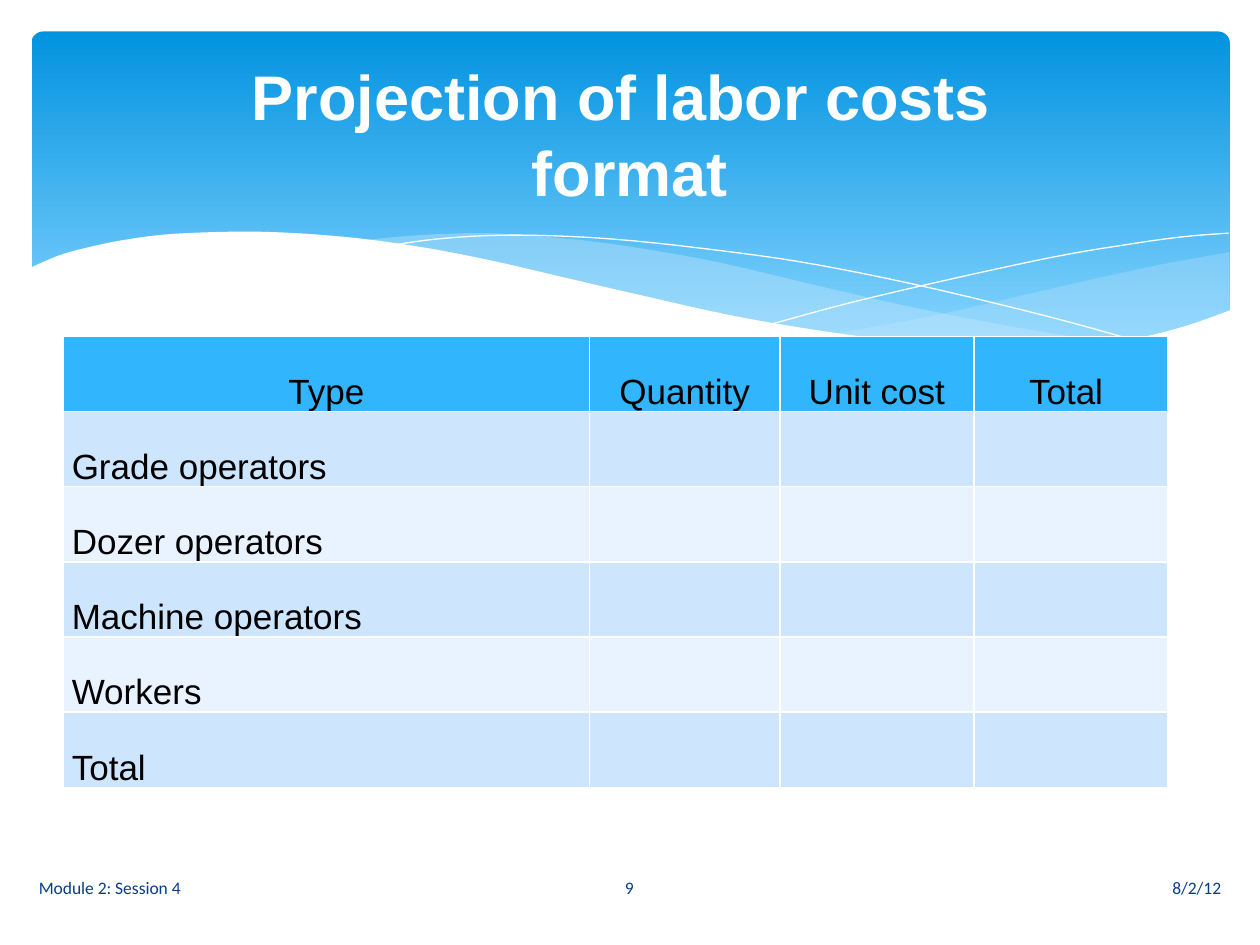
import pptx
import pptx.dml.color
import pptx.enum.shapes
import pptx.enum.text
import pptx.oxml
import pptx.oxml.ns
import pptx.util
from lxml import etree

Inches = pptx.util.Inches
Pt = pptx.util.Pt
RGBColor = pptx.dml.color.RGBColor
ALIGN = pptx.enum.text.PP_ALIGN
ANCHOR = pptx.enum.text.MSO_ANCHOR
qn = pptx.oxml.ns.qn

WHITE = RGBColor(0xFF, 0xFF, 0xFF)
BLACK = RGBColor(0x00, 0x00, 0x00)
NAVY = RGBColor(0x07, 0x3E, 0x87)
BANNER_TOP = RGBColor(0x02, 0x93, 0xE0)
BANNER_BOTTOM = RGBColor(0x83, 0xD3, 0xFE)
RIBBON = RGBColor(0xC6, 0xE7, 0xFC)
HEADER_FILL = RGBColor(0x31, 0xB6, 0xFD)
BANDS = (RGBColor(0xCE, 0xE5, 0xFE), RGBColor(0xE8, 0xF3, 0xFF))

TITLE = "Projection of labor costs \vformat"
HEADERS = ["Type", "Quantity", "Unit cost", "Total "]
LABOR_TYPES = ["Grade operators", "Dozer operators", "Machine operators", "Workers", "Total"]
COLUMN_WIDTHS = [4.18, 1.51, 1.54, 1.54]
TABLE_LEFT, TABLE_TOP, TABLE_HEIGHT = 0.5, 2.67, 3.58

# text, left, width, alignment
FOOTERS = [
    ("8/2/12", 5.65, 4.14, ALIGN.RIGHT),
    ("Module 2: Session 4", 0.21, 4.14, ALIGN.LEFT),
    ("9", 4.36, 1.27, ALIGN.CENTER),
]

# Each outline is a list of sides; a side is a smooth curve through its points.
RIGHT_RIBBON = [
    [(9.76, 2), (9.21, 2.1), (8.61, 2.23), (7.79, 2.42), (7.29, 2.53), (6.61, 2.65)],
    [(6.61, 2.65), (7.05, 2.71), (7.57, 2.76), (8.14, 2.78), (8.63, 2.75),
     (9.05, 2.69), (9.42, 2.59), (9.76, 2.47)],
]
LEFT_RIBBON = [
    [(8.93, 2.73), (8.37, 2.65), (7.75, 2.54), (7.06, 2.4), (6.29, 2.22), (5.69, 2.08),
     (5.14, 1.98), (4.65, 1.91), (4.2, 1.87), (3.8, 1.85), (3.28, 1.87), (2.86, 1.91)],
    [(2.86, 1.91), (3.42, 1.99), (4.04, 2.11), (4.49, 2.22), (5.3, 2.4), (6.01, 2.55),
     (6.65, 2.66), (7.22, 2.74), (7.73, 2.77), (8.18, 2.78), (8.57, 2.77), (8.93, 2.73)],
]
FALLING_LINE = [
    [(3.09, 1.95), (3.44, 1.9), (3.87, 1.87), (4.33, 1.87), (4.89, 1.9), (5.56, 1.97),
     (6.36, 2.08), (7.27, 2.26), (8.31, 2.51), (9.07, 2.72)],
]
RISING_LINE = [
    [(6.13, 2.57), (6.72, 2.41), (7.48, 2.23), (8.36, 2.04), (8.95, 1.94),
     (9.38, 1.88), (9.75, 1.85)],
]
FRONT_WAVE = [
    [(9.77, 2.46), (9.4, 2.59), (8.99, 2.69), (8.5, 2.75), (8.09, 2.77), (7.61, 2.75),
     (7.08, 2.7), (6.48, 2.62), (5.79, 2.5), (5.03, 2.33), (4.47, 2.2), (3.91, 2.07),
     (3.4, 1.97), (2.92, 1.9), (2.5, 1.86), (2.11, 1.84), (1.77, 1.84), (1.32, 1.86),
     (0.95, 1.91), (0.67, 1.97), (0.46, 2.03), (0.23, 2.13)],
    [(0.23, 3.29)],
    [(9.77, 3.29)],
]


def smooth(points, steps=5):
    """Sample a Catmull-Rom curve through the points."""
    padded = [points[0], *points, points[-1]]
    curve = [points[0]]
    for a, b, c, d in zip(padded, padded[1:], padded[2:], padded[3:]):
        for i in range(1, steps + 1):
            t = i / steps
            curve.append(tuple(
                b[k] + 0.5 * t * (c[k] - a[k]
                                  + t * (2 * a[k] - 5 * b[k] + 4 * c[k] - d[k])
                                  + t * t * (3 * b[k] - a[k] - 3 * c[k] + d[k]))
                for k in (0, 1)))
    return curve


def add_outline(slide, sides, fill=None, alpha=None):
    """Draw a filled outline, or an open white hairline when no fill is given."""
    points = [(Inches(x), Inches(y)) for side in sides for x, y in smooth(side)]
    builder = slide.shapes.build_freeform(*points[0])
    builder.add_line_segments(points[1:], close=fill is not None)
    sp = builder.convert_to_shape()
    sp.shadow.inherit = False
    if fill is None:
        sp.fill.background()
        sp.line.color.rgb = WHITE
        sp.line.width = Pt(0)
        return
    sp.fill.solid()
    sp.fill.fore_color.rgb = fill
    sp.line.fill.background()
    if alpha:
        color = sp._element.spPr.find(qn("a:solidFill")).find(qn("a:srgbClr"))
        etree.SubElement(color, qn("a:alpha")).set("val", str(alpha * 1000))


def write(tf, text, size, font="Arial", color=BLACK, bold=False, align=ALIGN.LEFT, spacing=None):
    p = tf.paragraphs[0]
    p.text = text
    p.alignment = align
    p.line_spacing = spacing
    for r in p.runs:
        r.font.size = Pt(size)
        r.font.name = font
        r.font.bold = bold
        r.font.color.rgb = color


def add_text(slide, text, left, top, width, height, **style):
    box = slide.shapes.add_textbox(Inches(left), Inches(top), Inches(width), Inches(height))
    tf = box.text_frame
    tf.word_wrap = True
    tf.vertical_anchor = ANCHOR.MIDDLE
    write(tf, text, **style)


def add_banner(slide):
    sp = slide.shapes.add_shape(pptx.enum.shapes.MSO_SHAPE.ROUNDED_RECTANGLE,
                                Inches(0.25), Inches(0.25), Inches(9.51), Inches(2.7))
    sp.adjustments[0] = 0.034
    sp.shadow.inherit = False
    sp.line.fill.background()
    sp.fill.gradient()
    sp.fill.gradient_angle = 270
    stops = sp.fill.gradient_stops
    for stop, position, color in zip(stops, (0, 0.9), (BANNER_TOP, BANNER_BOTTOM)):
        stop.position = position
        stop.color.rgb = color


def set_borders(cell):
    tcPr = cell._tc.get_or_add_tcPr()
    for i, side in enumerate("LRTB"):
        ln = etree.Element(qn(f"a:ln{side}"), w=str(Pt(1)))
        fill = etree.SubElement(ln, qn("a:solidFill"))
        etree.SubElement(fill, qn("a:srgbClr")).set("val", str(WHITE))
        tcPr.insert(i, ln)


def add_labor_table(slide):
    rows = [HEADERS] + [[name, "", "", ""] for name in LABOR_TYPES]
    frame = slide.shapes.add_table(len(rows), len(HEADERS), Inches(TABLE_LEFT), Inches(TABLE_TOP),
                                   Inches(sum(COLUMN_WIDTHS)), Inches(TABLE_HEIGHT))
    table = frame.table
    table.first_row = table.horz_banding = False
    for column, width in zip(table.columns, COLUMN_WIDTHS):
        column.width = Inches(width)
    for i, row in enumerate(rows):
        for j, text in enumerate(row):
            cell = table.cell(i, j)
            cell.fill.solid()
            cell.fill.fore_color.rgb = BANDS[(i - 1) % 2] if i else HEADER_FILL
            set_borders(cell)
            if text:
                cell.vertical_anchor = ANCHOR.BOTTOM
                cell.margin_left = cell.margin_right = Inches(0.07)
                cell.margin_top = cell.margin_bottom = 0
                write(cell.text_frame, text, 20, spacing=1.15,
                      align=ALIGN.LEFT if i else ALIGN.CENTER)


def main():
    prs = pptx.Presentation()
    prs.slide_width, prs.slide_height = Inches(10), Inches(7.5)
    slide = prs.slides.add_slide(prs.slide_layouts[6])
    add_banner(slide)
    add_outline(slide, RIGHT_RIBBON, RIBBON, alpha=29)
    add_outline(slide, LEFT_RIBBON, RIBBON, alpha=40)
    add_outline(slide, FALLING_LINE)
    add_outline(slide, RISING_LINE)
    add_outline(slide, FRONT_WAVE, WHITE)
    add_labor_table(slide)
    add_text(slide, TITLE, 0.5, 0.37, 9, 1.38, size=36, color=WHITE, bold=True, align=ALIGN.CENTER)
    for text, left, width, align in FOOTERS:
        add_text(slide, text, left, 6.84, width, 0.4, size=10, font="Calibri",
                 color=NAVY, align=align)
    prs.save("out.pptx")


if __name__ == "__main__":
    main()
